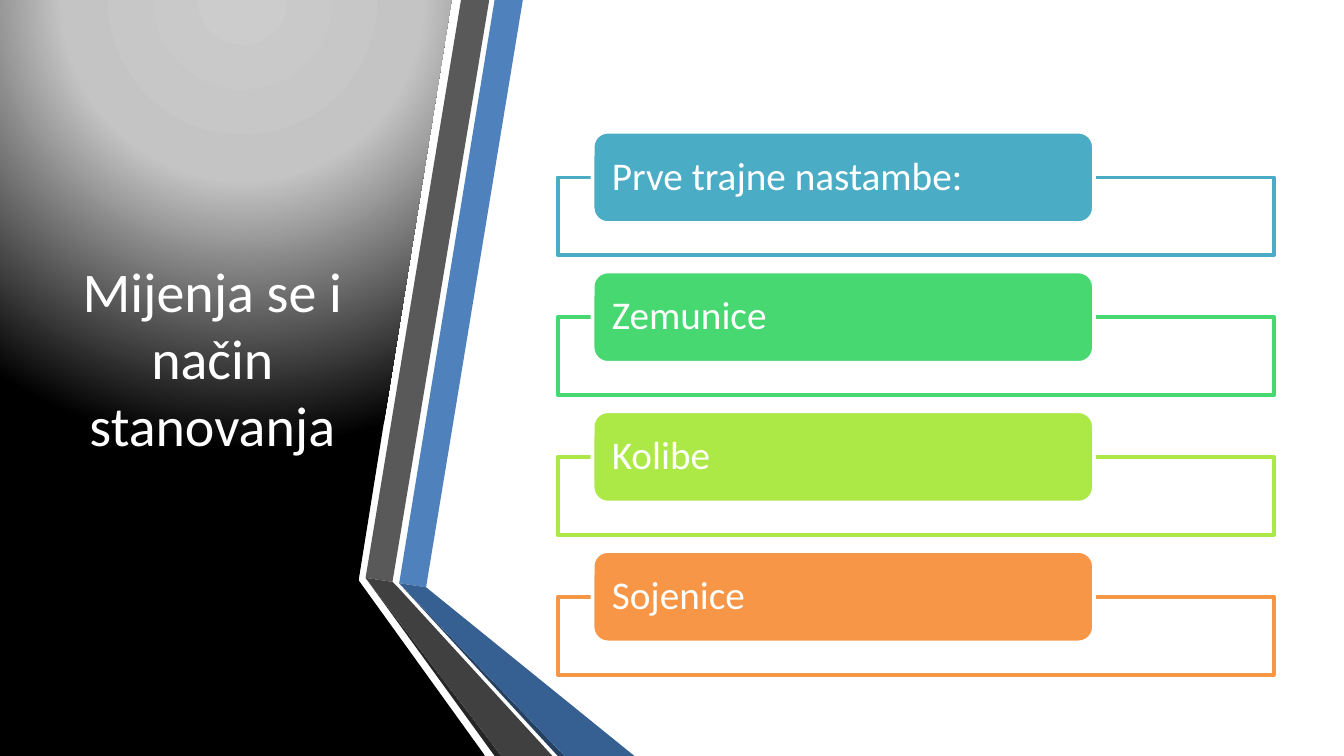
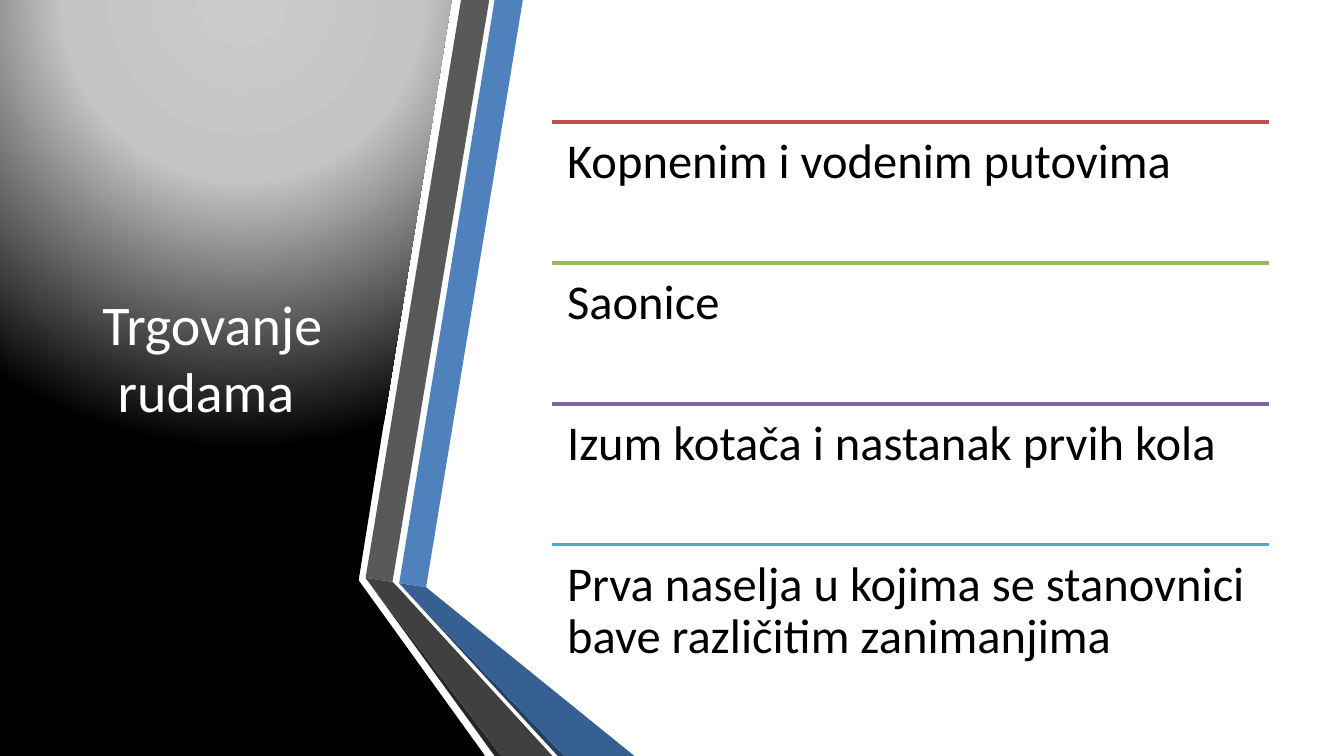
from dataclasses import dataclass

from lxml.etree import SubElement
from pptx import Presentation
from pptx.dml.color import RGBColor
from pptx.enum.shapes import MSO_CONNECTOR, MSO_SHAPE
from pptx.enum.text import MSO_ANCHOR, PP_ALIGN
from pptx.oxml import parse_xml
from pptx.oxml.ns import nsdecls, qn
from pptx.shapes.autoshape import Shape
from pptx.slide import Slide
from pptx.util import Inches, Pt


@dataclass(frozen=True)
class Theme:
    """Colours, font and type sizes shared by both slides."""

    font: str = "Calibri"
    white: str = "FFFFFF"
    black: str = "000000"
    blue: str = "4F81BD"
    blue_dark: str = "376092"
    blue_deep: str = "254061"
    gray: str = "595959"
    gray_dark: str = "404040"
    gray_deep: str = "262626"
    teal: str = "4BACC6"
    green: str = "47D872"
    lime: str = "ACE946"
    orange: str = "F79646"
    red: str = "C0504D"
    olive: str = "9BBB59"
    purple: str = "8064A2"
    glow_light: str = "CCCCCC"
    glow_middle: str = "C4C4C4"
    title_size: int = 30
    label_size: int = 21
    entry_size: int = 26
    line_width: int = 2


@dataclass(frozen=True)
class Item:
    """A line of text and its accent colour."""

    text: str
    color: str


@dataclass(frozen=True)
class Facet:
    """A flat polygon of the folded ribbon, in inches."""

    color: str
    points: tuple[tuple[float, float], ...]


THEME = Theme()
SLIDE_WIDTH = 10
SLIDE_HEIGHT = SLIDE_WIDTH * 9 / 16
CONTENT_HEIGHT = 4.19
ROW_WIDTH = 5.33

PANEL = ((0, 0), (3.36, 0), (2.67, 4.31), (2.67, 4.32), (3.61, SLIDE_HEIGHT), (0, SLIDE_HEIGHT))
GRAY_FOLD, BLUE_FOLD = (2.72, 4.3), (2.97, 4.34)
GRAY_EDGE, BLUE_EDGE = (2.92, 4.33), (3.17, 4.37)
FACETS = (
    Facet(THEME.blue, (BLUE_FOLD, BLUE_EDGE, (3.89, 0), (3.68, 0))),
    Facet(THEME.gray, (GRAY_FOLD, GRAY_EDGE, (3.64, 0), (3.43, 0))),
    Facet(THEME.gray_deep, (GRAY_FOLD, (3.68, SLIDE_HEIGHT), (3.73, SLIDE_HEIGHT))),
    Facet(THEME.blue_deep, (BLUE_FOLD, (4.15, SLIDE_HEIGHT), (4.2, SLIDE_HEIGHT))),
    Facet(THEME.blue_dark, (BLUE_FOLD, (4.2, SLIDE_HEIGHT), (4.72, SLIDE_HEIGHT), BLUE_EDGE)),
    Facet(
        THEME.gray_dark,
        (GRAY_FOLD, (3.73, SLIDE_HEIGHT), (4.11, SLIDE_HEIGHT), (2.96, 4.37), GRAY_EDGE),
    ),
)

DWELLINGS = (
    Item("Prve trajne nastambe:", THEME.teal),
    Item("Zemunice", THEME.green),
    Item("Kolibe", THEME.lime),
    Item("Sojenice", THEME.orange),
)
TRADE_POINTS = (
    Item("Kopnenim i vodenim putovima", THEME.red),
    Item("Saonice", THEME.olive),
    Item("Izum kotača i nastanak prvih kola", THEME.purple),
    Item("Prva naselja u kojima se stanovnici bave različitim zanimanjima", THEME.teal),
)


def rgb(color: str) -> RGBColor:
    """Turn a hexadecimal string into a colour."""
    return RGBColor.from_string(color)


def paint(shape: Shape, fill: str, line: str | None = None) -> None:
    """Give a shape a flat fill, an optional outline and no shadow."""
    shape.shadow.inherit = False
    shape.fill.solid()
    shape.fill.fore_color.rgb = rgb(fill)
    if line is None:
        shape.line.fill.background()
    else:
        shape.line.color.rgb = rgb(line)
        shape.line.width = Pt(THEME.line_width)


def write(
    shape: Shape,
    text: str,
    size: int,
    color: str,
    insets: tuple[float, float],
    anchor: MSO_ANCHOR,
    alignment: PP_ALIGN = PP_ALIGN.LEFT,
    line_spacing: float = 0.9,
) -> None:
    """Set wrapped text with horizontal and vertical insets."""
    frame = shape.text_frame
    frame.word_wrap = True
    frame.vertical_anchor = anchor
    frame.margin_left = frame.margin_right = Inches(insets[0])
    frame.margin_top = frame.margin_bottom = Inches(insets[1])
    frame.text = text
    paragraph = frame.paragraphs[0]
    paragraph.alignment = alignment
    paragraph.line_spacing = line_spacing
    font = paragraph.runs[0].font
    font.name = THEME.font
    font.size = Pt(size)
    font.color.rgb = rgb(color)


def add_polygon(shapes, points: tuple[tuple[float, float], ...], color: str) -> Shape:
    """Draw a closed polygon on a slide or in a group."""
    corners = [(Inches(x), Inches(y)) for x, y in points]
    builder = shapes.build_freeform(*corners[0])
    builder.add_line_segments(corners[1:], close=True)
    shape = builder.convert_to_shape()
    paint(shape, color)
    return shape


def apply_glow(shape: Shape) -> None:
    """Replace the solid fill by a circular gradient centred above the panel."""
    stops = ((0, THEME.glow_light), (40, THEME.glow_middle), (100, THEME.black))
    stop_xml = "".join(
        f'<a:gs pos="{position * 1000}"><a:srgbClr val="{color}"/></a:gs>'
        for position, color in stops
    )
    gradient = parse_xml(
        f'<a:gradFill {nsdecls("a")} rotWithShape="1"><a:gsLst>{stop_xml}</a:gsLst>'
        '<a:path path="circle"><a:fillToRect l="50000" t="-80000" r="50000" b="180000"/>'
        "</a:path></a:gradFill>"
    )
    properties = shape.element.spPr
    properties.replace(properties.find(qn("a:solidFill")), gradient)


def add_base(presentation: Presentation, title: str) -> Slide:
    """Add a slide with the glowing panel, the ribbon and the title."""
    slide = presentation.slides.add_slide(presentation.slide_layouts[6])
    slide.background.fill.solid()
    slide.background.fill.fore_color.rgb = rgb(THEME.white)
    apply_glow(add_polygon(slide.shapes, PANEL, THEME.black))
    ribbon = slide.shapes.add_group_shape()
    for facet in FACETS:
        add_polygon(ribbon.shapes, facet.points, facet.color)
    box = slide.shapes.add_textbox(
        Inches(0.44), Inches(0.56), Inches(2.28), Inches(CONTENT_HEIGHT)
    )
    write(
        box, title, THEME.title_size, THEME.white, (0.1, 0.05),
        MSO_ANCHOR.MIDDLE, PP_ALIGN.CENTER, 1.0,
    )
    return slide


def add_dwelling(slide: Slide, item: Item, top: float) -> None:
    """Draw an outlined frame with a rounded label over its upper edge."""
    frame = slide.shapes.add_shape(
        MSO_SHAPE.RECTANGLE, Inches(4.15), Inches(top + 0.34), Inches(ROW_WIDTH), Inches(0.58)
    )
    paint(frame, THEME.white, item.color)
    fill_color = frame.element.spPr.find(qn("a:solidFill"))[0]
    SubElement(fill_color, qn("a:alpha")).set("val", "90000")
    label = slide.shapes.add_shape(
        MSO_SHAPE.ROUNDED_RECTANGLE, Inches(4.41), Inches(top), Inches(3.73), Inches(0.68)
    )
    paint(label, item.color, THEME.white)
    write(label, item.text, THEME.label_size, THEME.white, (0.11, 0), MSO_ANCHOR.MIDDLE)


def add_trade_point(slide: Slide, item: Item, top: float, height: float) -> None:
    """Draw a coloured rule with its text underneath."""
    left = 4.11
    rule = slide.shapes.add_connector(
        MSO_CONNECTOR.STRAIGHT, Inches(left), Inches(top), Inches(left + ROW_WIDTH), Inches(top)
    )
    rule.line.color.rgb = rgb(item.color)
    rule.line.width = Pt(THEME.line_width)
    SubElement(rule.element.spPr, qn("a:effectLst"))
    box = slide.shapes.add_textbox(Inches(left), Inches(top), Inches(ROW_WIDTH), Inches(height))
    write(box, item.text, THEME.entry_size, THEME.black, (0.11, 0.11), MSO_ANCHOR.TOP)


def main() -> None:
    """Build both slides and save the presentation."""
    presentation = Presentation()
    presentation.slide_width = Inches(SLIDE_WIDTH)
    presentation.slide_height = Inches(SLIDE_HEIGHT)

    housing = add_base(presentation, "Mijenja se i način stanovanja")
    for index, item in enumerate(DWELLINGS):
        add_dwelling(housing, item, 0.98 + index * 1.04)

    trade = add_base(presentation, "Trgovanje rudama ")
    row_height = CONTENT_HEIGHT / len(TRADE_POINTS)
    for index, item in enumerate(TRADE_POINTS):
        add_trade_point(trade, item, 0.91 + index * row_height, row_height)

    presentation.save("out.pptx")


if __name__ == "__main__":
    main()
